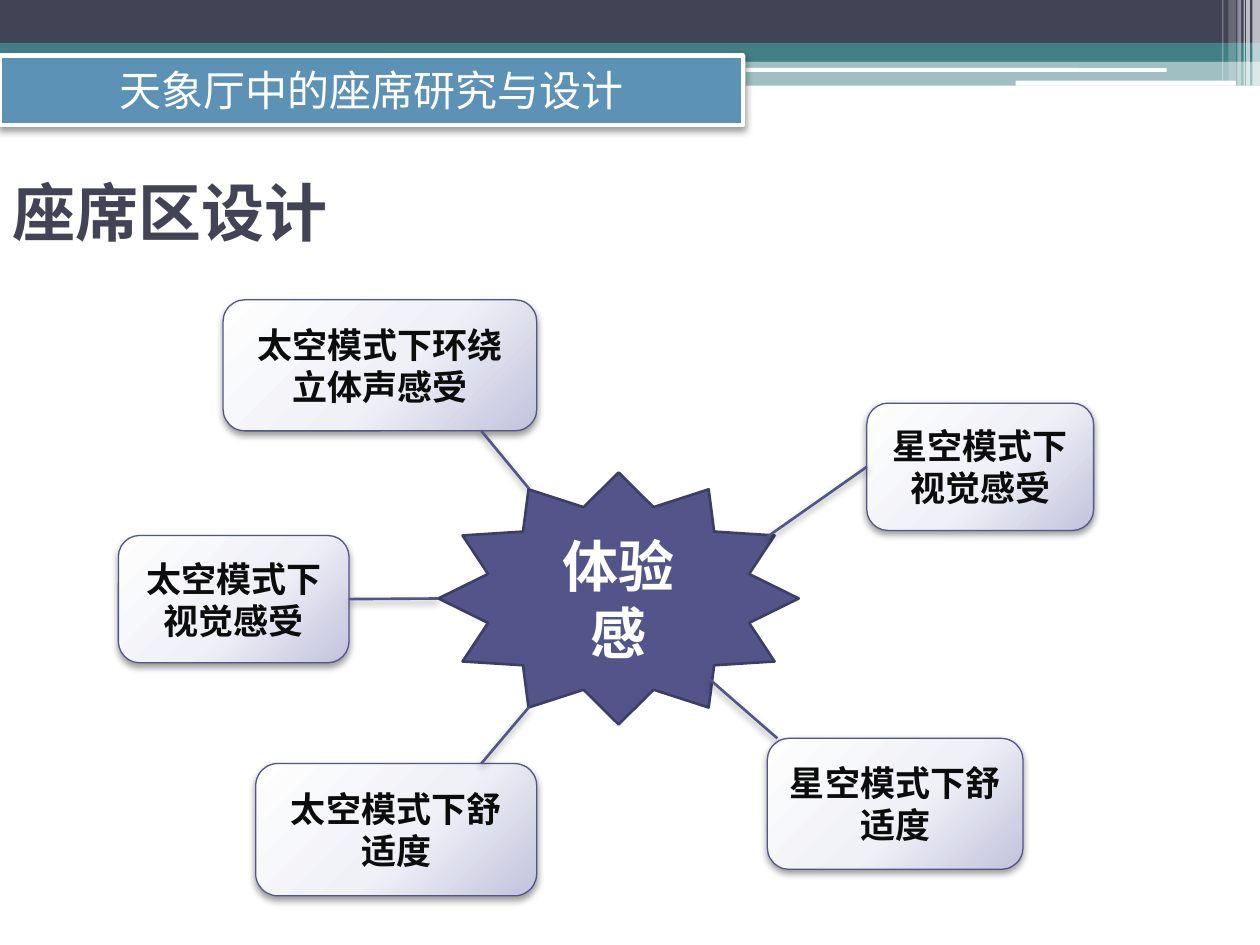
from dataclasses import dataclass
from typing import NamedTuple, Optional

from lxml import etree
from pptx import Presentation, util as u
from pptx.dml.color import RGBColor
from pptx.enum import shapes, text
from pptx.oxml import parse_xml
from pptx.oxml.ns import nsdecls, qn

# Grid: 100 columns by 75 rows, each cell a tenth of an inch
COLUMNS, ROWS = 100, 75
CELL = u.Inches(0.1)


@dataclass(frozen=True)
class Theme:
    navy: str = "424456"
    teal: str = "438086"
    blue: str = "5C92B5"
    violet: str = "53548A"
    violet_dark: str = "3D3E66"
    white: str = "FFFFFF"
    ink: str = "0C0C0C"
    glow: tuple = ((0, "FEFEFE"), (55, "F0F1F7"), (100, "C2C2DD"))
    latin: str = "Karla"
    east_asian: str = "Noto Sans CJK SC"
    heading: int = 36
    center: int = 32
    banner: int = 24
    body: int = 20


THEME = Theme()


class Area(NamedTuple):
    column: float
    row: float
    columns: float
    rows: float


class Bar(NamedTuple):
    area: Area
    color: str
    opacity: int = 100
    rounded: bool = False


class Topic(NamedTuple):
    words: str
    area: Area


class Spoke(NamedTuple):
    start: tuple
    end: tuple
    topic: Optional[int] = None
    side: Optional[int] = None


BARS = [
    Bar(Area(0, 4, COLUMNS, 0.9), THEME.teal, 50),
    Bar(Area(0, 0, COLUMNS, 3.4), THEME.navy),
    Bar(Area(0, 3.4, COLUMNS, 1), THEME.teal),
    Bar(Area(59.2, 3.9, 40.8, 1), THEME.teal),
    Bar(Area(59.2, 4.8, 40.8, 2), THEME.teal, 50),
    Bar(Area(59.1, 5.4, 33.5, 0.3), THEME.white, rounded=True),
    Bar(Area(80.6, 6.4, 17.5, 0.4), THEME.white, rounded=True),
    Bar(Area(99.4, 0, 0.6, 6.8), THEME.white, 65),
    Bar(Area(98.9, 0, 0.3, 6.8), THEME.white, 65),
    Bar(Area(98.7, 0, 0.1, 6.8), THEME.white, 60),
    Bar(Area(98.2, 0, 0.3, 6.8), THEME.white, 40),
    Bar(Area(97.5, 0, 0.6, 6.4), THEME.white, 20),
    Bar(Area(97, 0, 0.1, 6.4), THEME.white, 30),
]

TOPICS = [
    Topic("太空模式下环绕立体声感受", Area(17.7, 23.8, 24.9, 10.4)),
    Topic("太空模式下视觉感受", Area(9.4, 42.5, 18.3, 10.1)),
    Topic("星空模式下舒适度", Area(60.9, 58.6, 20.3, 10.4)),
    Topic("太空模式下舒适度", Area(20.3, 60.6, 22.3, 10.5)),
    Topic("星空模式下视觉感受", Area(68.8, 32, 18, 10.1)),
]

# The first spoke lies behind the star, the others in front
BACK_SPOKE = Spoke((38.2, 34.2), (42, 38.8))
FRONT_SPOKES = [
    Spoke((34.8, 47.5), (27.7, 47.5), topic=1, side=3),
    Spoke((60.9, 42.6), (68.8, 37.1), topic=4, side=1),
    Spoke((42, 56.1), (38.2, 60.6)),
    Spoke((56.3, 53.9), (61.7, 58.6)),
]


def cells(*counts: float) -> list:
    return [u.Emu(round(count * CELL)) for count in counts]


def add_shadow(shape) -> None:
    properties = shape._element.spPr
    for old in properties.findall(qn("a:effectLst")):
        properties.remove(old)
    properties.append(parse_xml(
        f'<a:effectLst {nsdecls("a")}><a:outerShdw blurRad="{u.Pt(4.1)}" '
        f'dist="{u.Pt(2)}" dir="5400000" rotWithShape="0"><a:srgbClr val="000000">'
        '<a:alpha val="40000"/></a:srgbClr></a:outerShdw></a:effectLst>'))


def add_glow(shape) -> None:
    stops = "".join(f'<a:gs pos="{place * 1000}"><a:srgbClr val="{color}"/></a:gs>'
                    for place, color in THEME.glow)
    shape._element.spPr.find(qn("a:prstGeom")).addnext(parse_xml(
        f'<a:gradFill {nsdecls("a")} rotWithShape="1"><a:gsLst>{stops}</a:gsLst>'
        '<a:path path="circle"><a:fillToRect l="-40000" t="-90000" r="140000" '
        'b="190000"/></a:path></a:gradFill>'))


def set_line(shape, color: str, width: float) -> None:
    shape.line.color.rgb = RGBColor.from_string(color)
    shape.line.width = u.Pt(width)


def draw_shape(page, kind, area: Area, fill: Optional[str] = None,
               line: Optional[tuple] = None):
    shape = page.shapes.add_shape(kind, *cells(*area))
    shape.shadow.inherit = False
    if fill:
        shape.fill.solid()
        shape.fill.fore_color.rgb = RGBColor.from_string(fill)
    if line:
        set_line(shape, *line)
    else:
        shape.line.fill.background()
    return shape


def write(box, words: str, size: int, color: str, bold: bool = False,
          align=text.PP_ALIGN.CENTER, font: str = THEME.east_asian) -> None:
    frame = box.text_frame
    frame.word_wrap = True
    frame.vertical_anchor = text.MSO_ANCHOR.MIDDLE
    para = frame.paragraphs[0]
    para.alignment = align
    span = para.add_run()
    span.text = words
    for name, value in {"size": u.Pt(size), "bold": bold, "name": font}.items():
        setattr(span.font, name, value)
    span.font.color.rgb = RGBColor.from_string(color)
    latin = span.font._element.find(qn("a:latin"))
    east_asian = etree.Element(qn("a:ea"), typeface=THEME.east_asian)
    latin.addnext(east_asian)


def draw_bar(page, bar: Bar) -> None:
    kind = shapes.MSO_SHAPE.ROUNDED_RECTANGLE if bar.rounded else shapes.MSO_SHAPE.RECTANGLE
    shape = draw_shape(page, kind, bar.area, bar.color)
    if bar.opacity < 100:
        color = shape._element.spPr.find(f'{qn("a:solidFill")}/{qn("a:srgbClr")}')
        etree.SubElement(color, qn("a:alpha"), val=str(bar.opacity * 1000))


def draw_topic(page, topic: Topic):
    box = draw_shape(page, shapes.MSO_SHAPE.ROUNDED_RECTANGLE, topic.area,
                     line=(THEME.violet, 0.75))
    add_glow(box)
    add_shadow(box)
    write(box, topic.words, THEME.body, THEME.ink, bold=True)
    return box


def draw_spoke(page, spoke: Spoke, boxes: list) -> None:
    line = page.shapes.add_connector(shapes.MSO_CONNECTOR.STRAIGHT,
                                     *cells(*spoke.start, *spoke.end))
    if spoke.topic is not None:
        line.end_connect(boxes[spoke.topic], spoke.side)
    set_line(line, THEME.violet, 1.5)
    add_shadow(line)


def main() -> None:
    deck = Presentation()
    deck.slide_width, deck.slide_height = cells(COLUMNS, ROWS)
    page = deck.slides.add_slide(deck.slide_layouts[6])

    # Header bands and edge stripes
    for bar in BARS:
        draw_bar(page, bar)

    # Heading and banner
    heading = page.shapes.add_textbox(*cells(0, 10.9, 90, 11.7))
    write(heading, "座席区设计", THEME.heading, THEME.navy, bold=True,
          align=text.PP_ALIGN.LEFT, font=THEME.latin)
    banner = draw_shape(page, shapes.MSO_SHAPE.RECTANGLE, Area(0, 4.4, 59, 5.5),
                        THEME.blue, (THEME.white, 2.5))
    add_shadow(banner)
    write(banner, "天象厅中的座席研究与设计", THEME.banner, THEME.white)

    # Topics around the central star
    boxes = [draw_topic(page, topic) for topic in TOPICS]
    draw_spoke(page, BACK_SPOKE, boxes)
    star = draw_shape(page, shapes.MSO_SHAPE.STAR_12_POINT, Area(34.8, 37.5, 28.6, 20),
                      THEME.violet, (THEME.violet_dark, 1.5))
    write(star, "体验感", THEME.center, THEME.white, bold=True)
    for spoke in FRONT_SPOKES:
        draw_spoke(page, spoke, boxes)

    deck.save("out.pptx")


if __name__ == "__main__":
    main()
